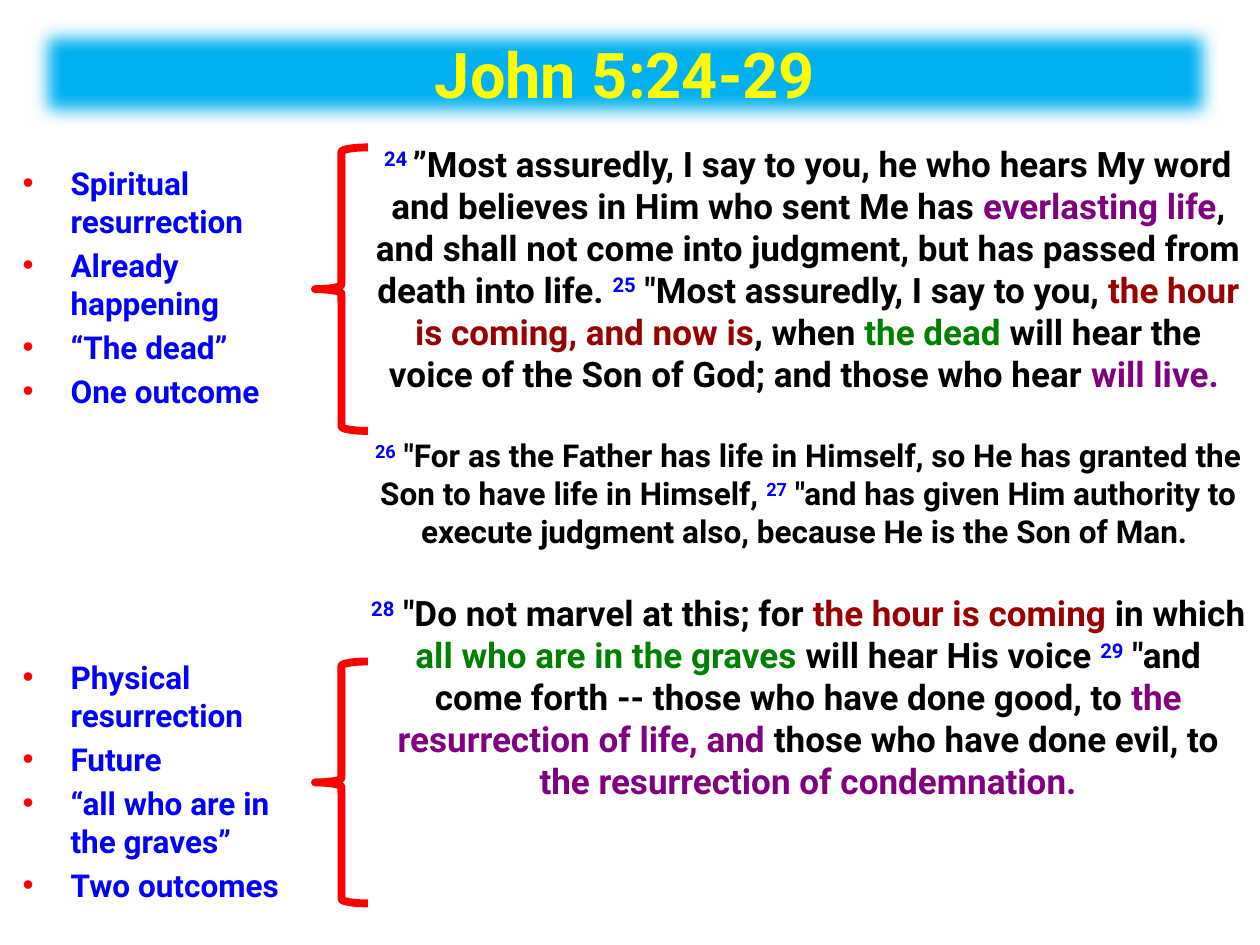
import pptx
import pptx.util
import pptx.dml.color
import pptx.enum.shapes
import pptx.enum.text
import pptx.oxml
import pptx.oxml.ns
from pptx.util import Inches

FONT = "Roboto"
BLUE, RED, BLACK = "0000FF", "FF0000", "000000"
PURPLE, MAROON, GREEN = "800080", "990000", "008000"
ALIGN = pptx.enum.text.PP_ALIGN

# Verses: (size, runs); a run is text, colour; verse numbers are blue and raised
VERSES = [
    (20, [
        ("24 ", BLUE),
        ("”Most assuredly, I say to you, he who hears My word and believes in "
         "Him who sent Me has ", BLACK),
        ("everlasting life", PURPLE),
        (", and shall not come into judgment, but has passed from death into life. ", BLACK),
        ("25", BLUE),
        (' "Most assuredly, I say to you, ', BLACK),
        ("the hour is coming, and now is", MAROON),
        (", when ", BLACK),
        ("the dead ", GREEN),
        ("will hear the voice of the Son of God; and those who hear ", BLACK),
        ("will live. ", PURPLE),
    ]),
    (18, [
        ("26", BLUE),
        (' "For as the Father has life in Himself, so He has granted the Son '
         "to have life in Himself, ", BLACK),
        ("27", BLUE),
        (' "and has given Him authority to execute judgment also, because He '
         "is the Son of Man. ", BLACK),
    ]),
    (20, [
        ("28", BLUE),
        (' "Do not marvel at this; for ', BLACK),
        ("the hour is coming", MAROON),
        (" in which ", BLACK),
        ("all who are in the graves ", GREEN),
        ("will hear His voice ", BLACK),
        ("29", BLUE),
        (' "and come forth -- those who have done good, to ', BLACK),
        ("the resurrection of life, and ", PURPLE),
        ("those who have done evil, to ", BLACK),
        ("the resurrection of condemnation.", PURPLE),
    ]),
]


def color(code):
    return pptx.dml.color.RGBColor.from_string(code)


def xml(tag, attrs="", inner=""):
    space = pptx.oxml.ns.nsdecls("a")
    return pptx.oxml.parse_xml(f"<a:{tag} {space} {attrs}>{inner}</a:{tag}>")


def place(shape, box):
    shape.left, shape.top, shape.width, shape.height = map(Inches, box)


def write(para, text, size=18, tint=BLUE, raised=False):
    run = para.add_run()
    run.text = text
    font = run.font
    font.name, font.size, font.bold = FONT, pptx.util.Pt(size), True
    font.color.rgb = color(tint)
    if raised:
        run._r.get_or_add_rPr().set("baseline", "30000")


def lines(frame, count):
    """Yield the given number of paragraphs of a text frame."""
    for i in range(count):
        yield frame.add_paragraph() if i else frame.paragraphs[0]


def banner(shape, box, text):
    place(shape, box)
    shape.fill.solid()
    shape.fill.fore_color.rgb = color("00B0F0")
    soft = xml("effectLst", inner='<a:softEdge rad="127000"/>')
    shape._element.spPr.append(soft)
    frame = shape.text_frame
    frame.auto_size = pptx.enum.text.MSO_AUTO_SIZE.NONE
    frame.vertical_anchor = pptx.enum.text.MSO_ANCHOR.MIDDLE
    para = frame.paragraphs[0]
    para.alignment = ALIGN.CENTER
    write(para, text, size=36, tint="FFFF00")


def passage(slide, box):
    frame = slide.shapes.add_textbox(*map(Inches, box)).text_frame
    frame.word_wrap = True
    for para, (size, runs) in zip(lines(frame, len(VERSES)), VERSES):
        para.alignment = ALIGN.CENTER
        if para is not frame.paragraphs[0] and size:
            para.space_before = pptx.util.Pt(24)
        for text, tint in runs:
            write(para, text, size=size, tint=tint, raised=tint == BLUE)
    frame.paragraphs[0].space_before = pptx.util.Pt(0)


def points(shape, box, items):
    place(shape, box)
    frame = shape.text_frame
    frame.auto_size = pptx.enum.text.MSO_AUTO_SIZE.NONE
    for para, item in zip(lines(frame, len(items)), items):
        props = para._p.get_or_add_pPr()
        props.set("marL", str(Inches(0.38)))
        props.set("indent", str(-Inches(0.38)))
        props.append(xml("spcBef", inner='<a:spcPct val="20000"/>'))
        props.append(xml("buClr", inner=f'<a:srgbClr val="{RED}"/>'))
        props.append(xml("buFont", 'typeface="Arial"'))
        props.append(xml("buChar", 'char="•"'))
        write(para, item)


def brace(slide, box):
    kind = pptx.enum.shapes.MSO_SHAPE.LEFT_BRACE
    shape = slide.shapes.add_shape(kind, *map(Inches, box))
    shape.shadow.inherit = False
    shape.fill.background()
    shape.line.color.rgb = color(RED)
    shape.line.width = pptx.util.Pt(4.5)


def main():
    deck = pptx.Presentation()
    deck.slide_width, deck.slide_height = Inches(10), Inches(7.5)
    slide = deck.slides.add_slide(deck.slide_layouts[3])
    title, first, second = list(slide.placeholders)[:3]

    # Title band and scripture
    banner(title, (0.25, 0.17, 9.42, 0.83), "John 5:24-29")
    passage(slide, (2.83, 1.08, 7.17, 6.28))

    # The two resurrections, each with its brace
    brace(slide, (2.5, 1.17, 0.42, 2.25))
    points(first, (0.08, 1.25, 2.33, 2.33),
           ["Spiritual resurrection", "Already happening", "“The dead”", "One outcome"])
    brace(slide, (2.5, 5.25, 0.42, 1.92))
    points(second, (0.08, 5.17, 2.42, 2.33),
           ["Physical resurrection", "Future", "“all who are in the graves”", "Two outcomes"])

    deck.save("out.pptx")


if __name__ == "__main__":
    main()
